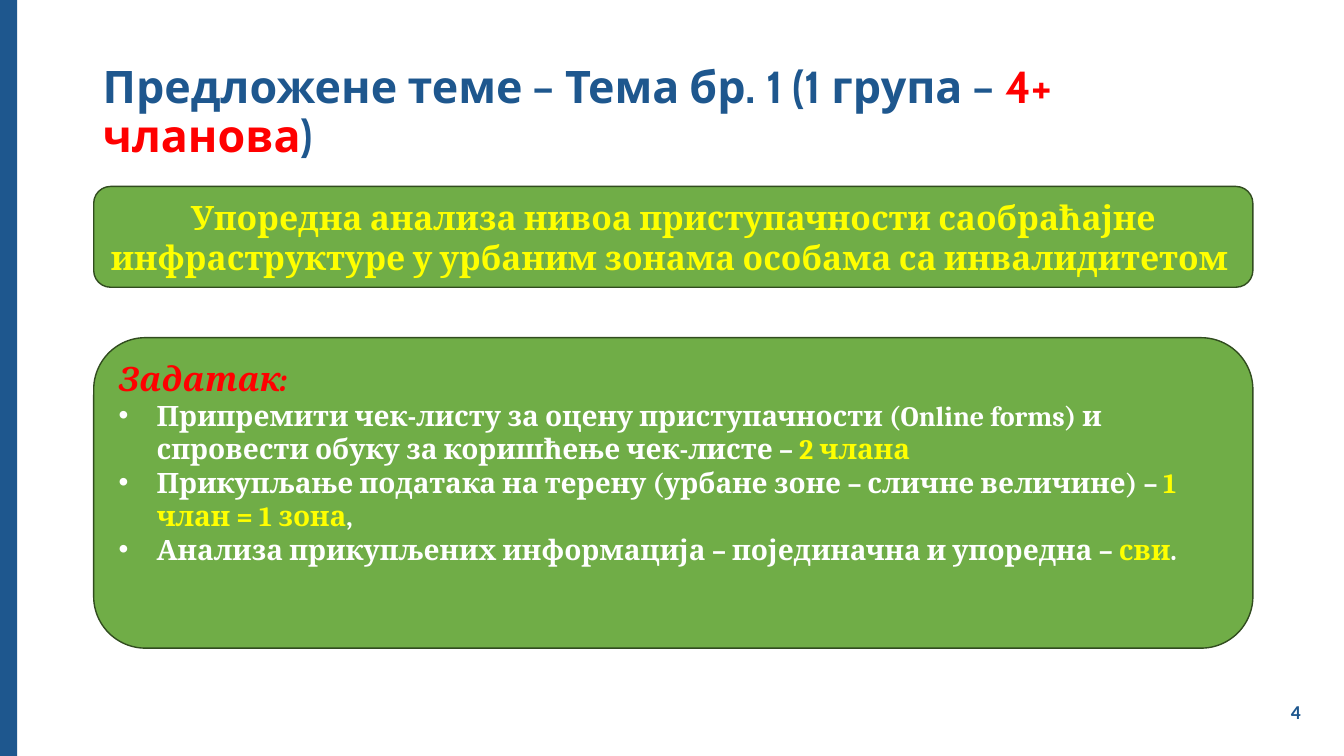
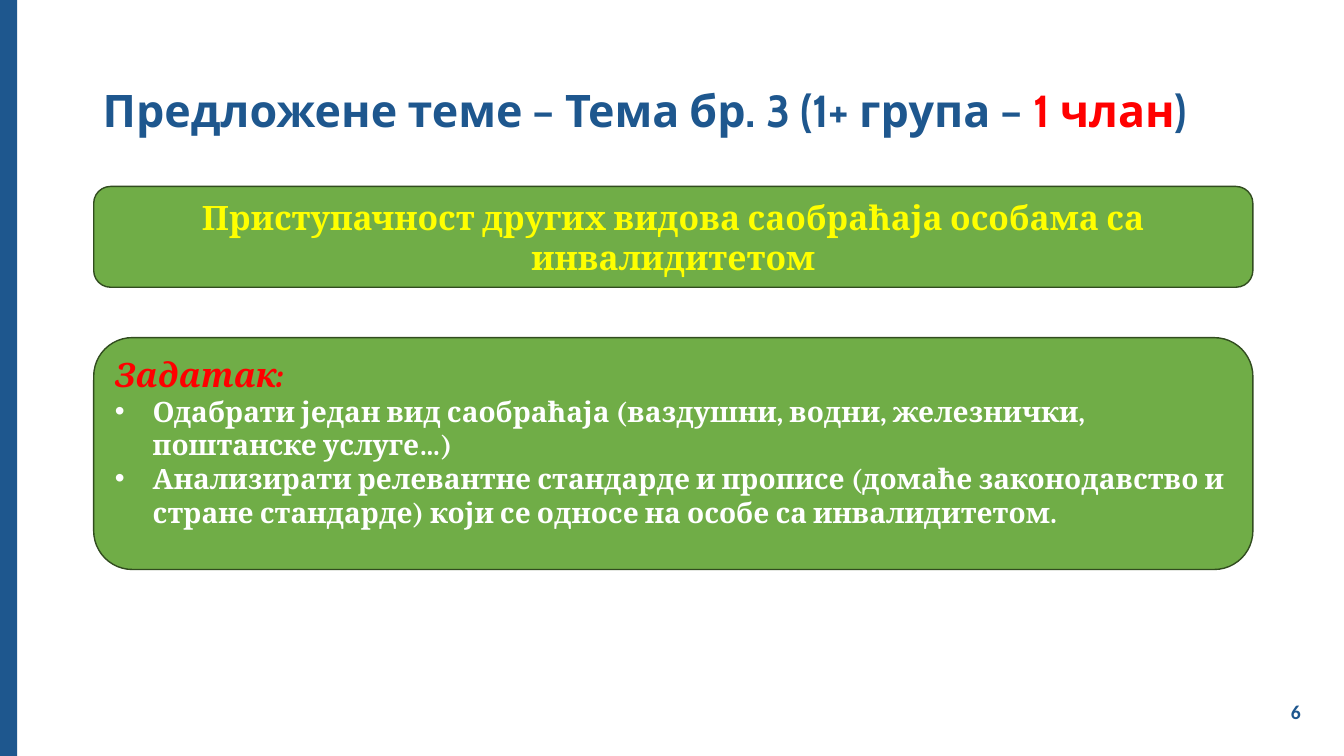
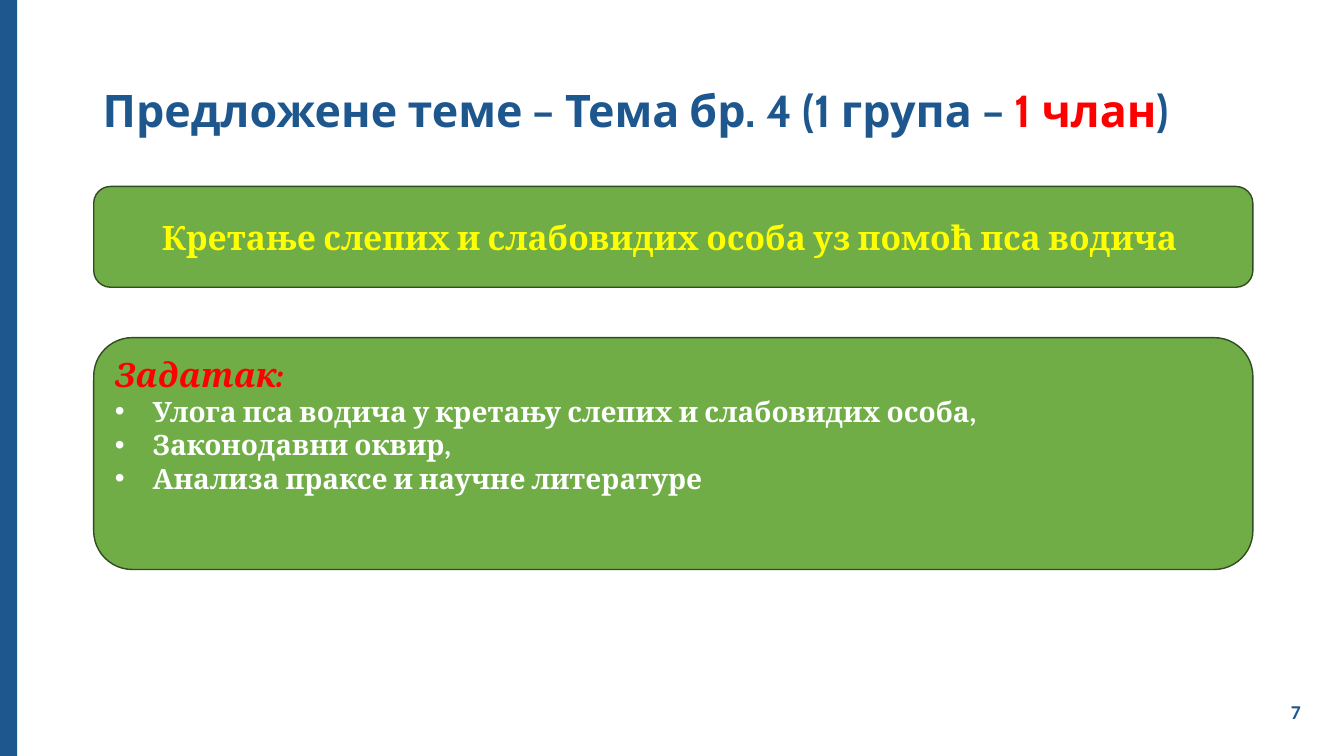
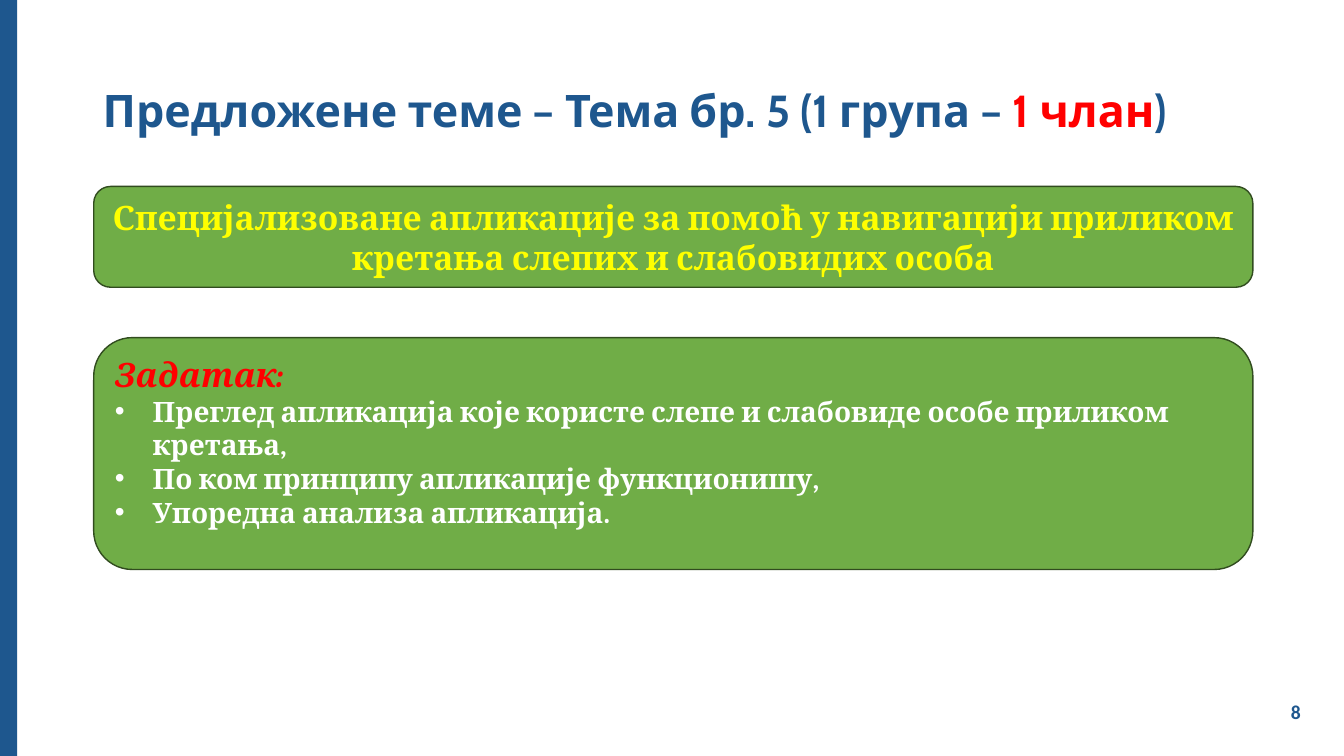
from lxml.etree import SubElement
from pptx import Presentation
from pptx.dml.color import RGBColor
from pptx.enum.shapes import MSO_SHAPE as SHAPE
from pptx.enum.text import MSO_ANCHOR as ANCHOR, PP_ALIGN as ALIGN
from pptx.oxml.ns import qn
from pptx.util import Pt

# Text between asterisks takes the highlight colour of its box.
SLIDES = [
    dict(number=4, title="Предложене теме – Тема бр. 1 (1 група – *4+ чланова*)",
         topic="Упоредна анализа нивоа приступачности саобраћајне инфраструктуре "
               "у урбаним зонама особама са инвалидитетом ",
         task_height=221.76,
         tasks=["Припремити чек-листу за оцену приступачности (Online forms) и "
                "спровести обуку за коришћење чек-листе – *2 члана*",
                "Прикупљање података на терену (урбане зоне – сличне величине) – "
                "*1 члан = 1 зона*,",
                "Анализа прикупљених информација – појединачна и упоредна – *сви*."]),
    dict(number=6, title="Предложене теме – Тема бр. 3 (1+ група – *1 члан*)",
         topic="Приступачност других видова саобраћаја особама са инвалидитетом",
         task_height=165.6,
         tasks=["Одабрати један вид саобраћаја (ваздушни, водни, железнички, "
                "поштанске услуге…)",
                "Анализирати релевантне стандарде и прописе (домаће законодавство и "
                "стране стандарде) који се односе на особе са инвалидитетом."]),
    dict(number=7, title="Предложене теме – Тема бр. 4 (1 група – *1 члан*)",
         topic="Кретање слепих и слабовидих особа уз помоћ пса водича ",
         task_height=165.6,
         tasks=["Улога пса водича у кретању слепих и слабовидих особа,",
                "Законодавни оквир,",
                "Анализа праксе и научне литературе"]),
    dict(number=8, title="Предложене теме – Тема бр. 5 (1 група – *1 члан*)",
         topic="Специјализоване апликације за помоћ у навигацији приликом кретања "
               "слепих и слабовидих особа",
         task_height=165.6,
         tasks=["Преглед апликација које користе слепе и слабовиде особе приликом "
                "кретања,",
                "По ком принципу апликације функционишу,",
                "Упоредна анализа апликација."]),
]
TASK_HEADING = "Задатак:"

BLUE, GREEN, DARK_GREEN = "1E578E", "70AD47", "314C1F"
RED, YELLOW, WHITE = "FF0000", "FFFF00", "FFFFFF"
TITLE_FONT, BODY_FONT, NUMBER_FONT = "Cabin", "Cambria", "Calibri"
WIDTH, HEIGHT = 960, 540
CARD_LEFT, CARD_WIDTH = 66.96, 828
BULLET_INDENT = 27


def rgb(color):
    return RGBColor.from_string(color)


def write(p, text, font, size, color, highlight=None, italic=False):
    """Add bold runs; every second part between asterisks is highlighted."""
    for i, part in enumerate(text.split("*")):
        if part:
            r = p.add_run()
            r.text = part
            f = r.font
            f.name, f.size, f.bold, f.italic = font, Pt(size), True, italic
            f.color.rgb = rgb(highlight if i % 2 else color)


def add_bullet(p):
    pPr = p._p.get_or_add_pPr()
    pPr.set("marL", str(Pt(BULLET_INDENT)))
    pPr.set("indent", str(-Pt(BULLET_INDENT)))
    SubElement(pPr, qn("a:buFont")).set("typeface", "Arial")
    SubElement(pPr, qn("a:buChar")).set("char", "•")


def add_text_box(s, left, top, width, height):
    tf = s.shapes.add_textbox(Pt(left), Pt(top), Pt(width), Pt(height)).text_frame
    tf.word_wrap = True
    tf.vertical_anchor = ANCHOR.MIDDLE
    return tf.paragraphs[0]


def add_filled(s, kind, left, top, width, height, fill, line=None):
    sp = s.shapes.add_shape(kind, Pt(left), Pt(top), Pt(width), Pt(height))
    sp.shadow.inherit = False
    sp.fill.solid()
    sp.fill.fore_color.rgb = rgb(fill)
    if line:
        sp.line.color.rgb = rgb(line)
        sp.line.width = Pt(1)
    else:
        sp.line.fill.background()
    return sp


def add_card(s, top, height, anchor):
    tf = add_filled(s, SHAPE.ROUNDED_RECTANGLE, CARD_LEFT, top, CARD_WIDTH, height,
                    GREEN, DARK_GREEN).text_frame
    tf.word_wrap = True
    tf.vertical_anchor = anchor
    return tf


def add_frame(s, title, number):
    """Add what all slides share: side band, page number and title."""
    add_filled(s, SHAPE.RECTANGLE, 0, 0, 12.24, HEIGHT, BLUE)
    p = add_text_box(s, 907.2, 493.92, 36.72, 28.8)
    p.alignment = ALIGN.CENTER
    write(p, str(number), NUMBER_FONT, 14, BLUE)
    p = add_text_box(s, 66.24, 28.8, 828, 104.4)
    p.line_spacing = 0.9
    write(p, title, TITLE_FONT, 32, BLUE, RED)


def add_topic(s, topic):
    p = add_card(s, 133.2, 72, ANCHOR.MIDDLE).paragraphs[0]
    p.alignment = ALIGN.CENTER
    write(p, topic, BODY_FONT, 24, YELLOW)


def add_tasks(s, tasks, height):
    tf = add_card(s, 241.2, height, ANCHOR.TOP)
    p = tf.paragraphs[0]
    p.alignment = ALIGN.LEFT
    write(p, TASK_HEADING, BODY_FONT, 24, RED, italic=True)
    for task in tasks:
        p = tf.add_paragraph()
        p.alignment = ALIGN.LEFT
        add_bullet(p)
        write(p, task, BODY_FONT, 20, WHITE, YELLOW)


def main():
    prs = Presentation()
    prs.slide_width, prs.slide_height = Pt(WIDTH), Pt(HEIGHT)
    for content in SLIDES:
        s = prs.slides.add_slide(prs.slide_layouts[6])
        add_frame(s, content["title"], content["number"])
        add_topic(s, content["topic"])
        add_tasks(s, content["tasks"], content["task_height"])
    prs.save("out.pptx")


if __name__ == "__main__":
    main()
